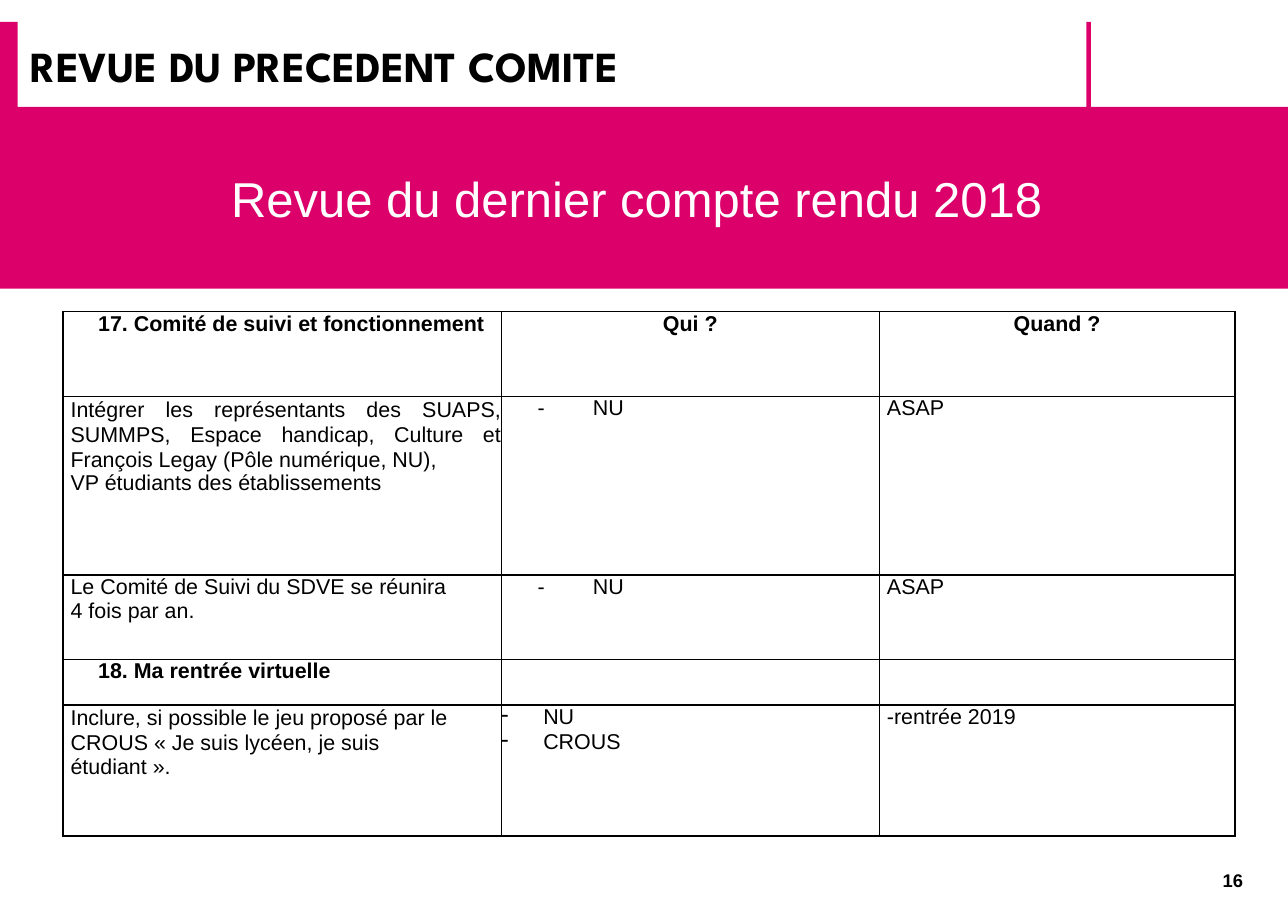
import lxml.etree
import pptx
import pptx.dml.color
import pptx.enum.shapes
import pptx.enum.text
import pptx.oxml.ns
import pptx.util

COLOURS = {"pink": "DC006B", "white": "FFFFFF", "black": "000000"}
WIDTH, HEIGHT = 11.69, 8.27
COLUMNS = [34.05, 29.34, 27.63]  # % of the slide's width
ROWS = [9.31, 19.59, 9.31, 4.96, 14.39]  # % of the slide's height
ALIGN = pptx.enum.text.PP_ALIGN
MARGIN = 0.07

HEADING = {"left": 0.32, "bold": True}
CENTRED = {"align": ALIGN.CENTER, "bold": True}
PLAIN = {"left": MARGIN}
LOOSE = {"left": MARGIN, "spacing": 1.05}
TIGHT = {"left": MARGIN, "spacing": 0.96, "before": 0.1}
JUSTIFIED = {"align": ALIGN.JUSTIFY}
TABBED = {"left": 0.33, "tab": 1}
DASHED = {"left": 0.38, "dash": True}

CELLS = [
    [[("17. Comité de suivi et fonctionnement", HEADING)],
     [("Qui ?", CENTRED)],
     [("Quand ?", CENTRED)]],
    [[("Intégrer les représentants des SUAPS, SUMMPS, Espace handicap, Culture et "
       "François Legay (Pôle numérique, NU),", LOOSE | JUSTIFIED),
      ("VP étudiants des établissements", TIGHT | JUSTIFIED)],
     [("-\tNU", TABBED)],
     [("ASAP", PLAIN)]],
    [[("Le Comité de Suivi du SDVE se réunira", PLAIN),
      ("4 fois par an.", TIGHT | {"before": 0.8})],
     [("-\tNU", TABBED)],
     [("ASAP", PLAIN)]],
    [[("18. Ma rentrée virtuelle", HEADING | {"spacing": 0.96})], [], []],
    [[("Inclure, si possible le jeu proposé par le CROUS « Je suis lycéen, je suis", LOOSE),
      ("étudiant ».", TIGHT)],
     [("NU", DASHED), ("CROUS", DASHED | {"before": 0.8})],
     [("-rentrée 2019", PLAIN)]],
]


def colour(name):
    return pptx.dml.color.RGBColor.from_string(COLOURS[name])


def across(percent):
    return pptx.util.Inches(WIDTH * percent / 100)


def down(percent):
    return pptx.util.Inches(HEIGHT * percent / 100)


def place(left, top, width, height):
    return across(left), down(top), across(width), down(height)


def add_element(parent, tag, **attributes):
    element = lxml.etree.SubElement(parent, pptx.oxml.ns.qn(tag))
    for name, value in attributes.items():
        element.set(name, str(value))
    return element


def add_run(paragraph, text, size, ink="black", bold=False, font="Arial"):
    run = paragraph.add_run()
    run.text = text
    run.font.name = font
    run.font.size = pptx.util.Pt(size)
    run.font.bold = bold
    run.font.color.rgb = colour(ink)


def add_block(slide, box):
    shape = slide.shapes.add_shape(pptx.enum.shapes.MSO_SHAPE.RECTANGLE, *box)
    shape.shadow.inherit = False
    shape.fill.solid()
    shape.fill.fore_color.rgb = colour("pink")
    shape.line.fill.background()
    return shape


def write_line(shape, text, size, align=ALIGN.CENTER, inset=0.1, **style):
    """Put one vertically centred line of text in a shape or text box."""
    frame = shape.text_frame
    frame.word_wrap = True
    frame.vertical_anchor = pptx.enum.text.MSO_ANCHOR.MIDDLE
    frame.margin_left = frame.margin_right = pptx.util.Inches(inset)
    frame.margin_top = frame.margin_bottom = pptx.util.Inches(inset / 2)
    frame.paragraphs[0].alignment = align
    add_run(frame.paragraphs[0], text, size, **style)


def write_paragraph(paragraph, text, left=0, align=ALIGN.LEFT, spacing=None,
                    before=0, tab=None, dash=False, bold=False):
    paragraph.alignment = align
    paragraph.space_before = pptx.util.Pt(before)
    if spacing:
        paragraph.line_spacing = spacing
    properties = paragraph._p.get_or_add_pPr()
    indent = pptx.util.Inches(left)
    properties.set("marL", str(indent))
    properties.set("indent", str(-indent if dash else 0))
    if dash:
        bullet_colour = add_element(properties, "a:buClr")
        add_element(bullet_colour, "a:srgbClr", val=COLOURS["black"])
        add_element(properties, "a:buChar", char="-")
    if tab:
        stops = add_element(properties, "a:tabLst")
        add_element(stops, "a:tab", pos=pptx.util.Inches(tab), algn="l")
    add_run(paragraph, text, 14, bold=bold)


def add_borders(cell):
    properties = cell._tc.get_or_add_tcPr()
    for index, side in enumerate(("a:lnL", "a:lnR", "a:lnT", "a:lnB")):
        line = add_element(properties, side, w=pptx.util.Pt(1))
        fill = add_element(line, "a:solidFill")
        add_element(fill, "a:srgbClr", val=COLOURS["black"])
        properties.insert(index, line)


def fill_cell(cell, content):
    cell.margin_left = cell.margin_right = cell.margin_top = cell.margin_bottom = 0
    cell.fill.solid()
    cell.fill.fore_color.rgb = colour("white")
    add_borders(cell)
    frame = cell.text_frame
    for index, (text, style) in enumerate(content):
        paragraph = frame.add_paragraph() if index else frame.paragraphs[0]
        write_paragraph(paragraph, text, **style)


def add_review_table(slide):
    box = place(4.88, 34.22, sum(COLUMNS), sum(ROWS))
    table = slide.shapes.add_table(len(ROWS), len(COLUMNS), *box).table
    table.first_row = table.horz_banding = False
    for column, share in zip(table.columns, COLUMNS):
        column.width = across(share)
    for row, share, contents in zip(table.rows, ROWS, CELLS):
        row.height = down(share)
        for cell, content in zip(row.cells, contents):
            fill_cell(cell, content)


def main():
    presentation = pptx.Presentation()
    presentation.slide_width = across(100)
    presentation.slide_height = down(100)
    slide = presentation.slides.add_slide(presentation.slide_layouts[6])

    for left, width in ((0, 1.37), (84.35, 0.34)):
        add_block(slide, place(left, 2.42, width, 9.55))
    title = slide.shapes.add_textbox(*place(2.4, 2.42, 75.36, 9.43))
    write_line(title, "REVUE DU PRECEDENT COMITE", 28, ALIGN.LEFT, 0,
               bold=True, font="League Spartan")
    page_number = slide.shapes.add_textbox(*place(92.47, 94.8, 6.5, 3.75))
    write_line(page_number, "16", 12, bold=True)
    banner = add_block(slide, place(0, 11.73, 100, 19.95))
    write_line(banner, "Revue du dernier compte rendu 2018 ", 32, ink="white")
    add_review_table(slide)

    presentation.save("out.pptx")


if __name__ == "__main__":
    main()
